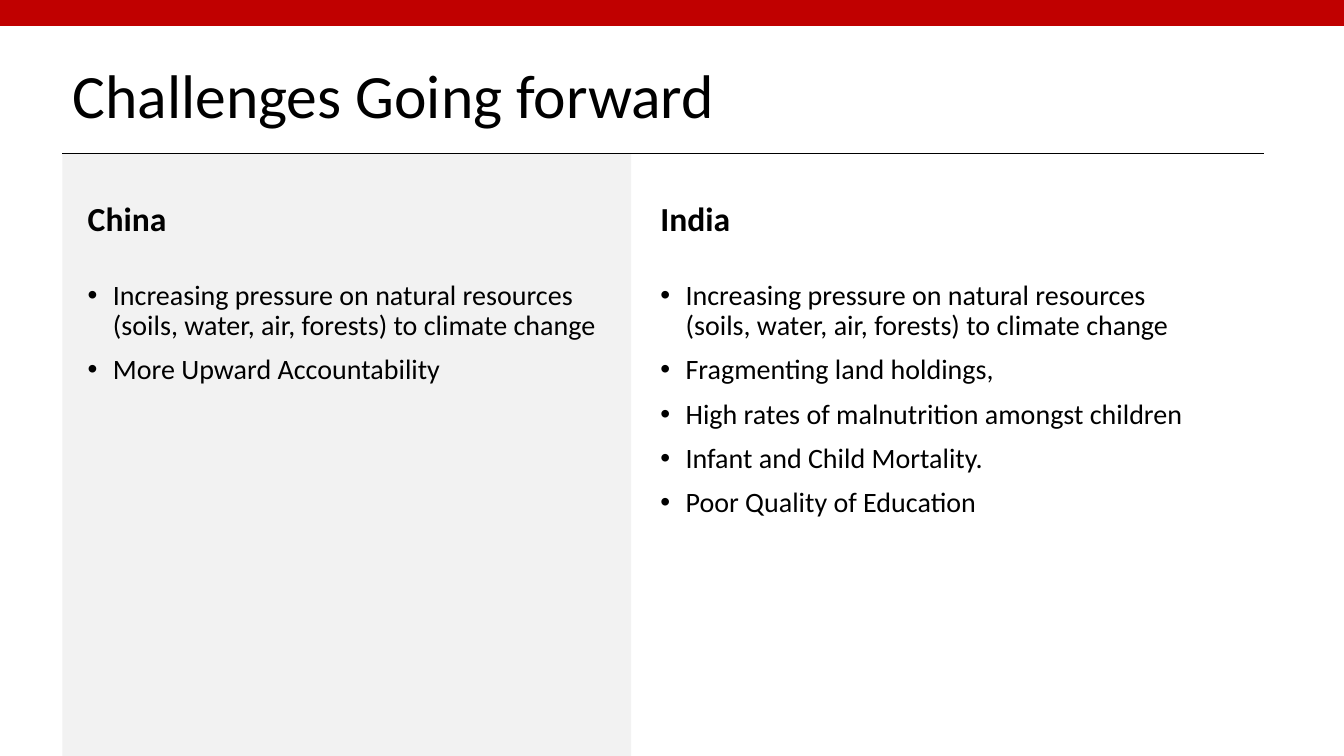
from pptx import Presentation
from pptx.dml.color import RGBColor
from pptx.enum import shapes, text
from pptx.oxml import parse_xml
from pptx.oxml import ns
from pptx.util import Inches, Pt

RED = RGBColor(0xC0, 0x00, 0x00)
GREY = RGBColor(0xF2, 0xF2, 0xF2)
BLACK = RGBColor(0x00, 0x00, 0x00)
WHITE = RGBColor(0xFF, 0xFF, 0xFF)

EDGE, RULE = 0.62, 1.52
SHARED = ("Increasing pressure on natural resources "
          "(soils, water, air, forests) to climate change")
COLUMNS = [
    (0.77, 5.64, "China", [SHARED, "More Upward Accountability"]),
    (6.45, 5.67, "India", [
        SHARED,
        "Fragmenting land holdings,",
        "High rates of malnutrition amongst children",
        "Infant and Child Mortality.",
        "Poor Quality of Education",
    ]),
]


def add_block(slide, box, color):
    block = slide.shapes.add_shape(
        shapes.MSO_SHAPE.RECTANGLE, *map(Inches, box))
    block.shadow.inherit = False
    block.fill.solid()
    block.fill.fore_color.rgb = color
    block.line.fill.background()
    return block


def add_rule(slide, left, right, top):
    rule = slide.shapes.add_connector(
        shapes.MSO_CONNECTOR.STRAIGHT,
        Inches(left), Inches(top), Inches(right), Inches(top))
    rule.line.color.rgb = BLACK
    rule.line.width = Pt(0.5)
    props = rule._element.spPr
    props.append(parse_xml(f"<a:effectLst {ns.nsdecls('a')}/>"))


def fill_text(holder, box, lines, size, anchor, bold=False, before=10):
    holder.left, holder.top, holder.width, holder.height = map(Inches, box)
    frame = holder.text_frame
    frame.text = "\n".join(lines)
    frame.word_wrap = True
    frame.auto_size = text.MSO_AUTO_SIZE.NONE
    frame.vertical_anchor = anchor
    for para in frame.paragraphs:
        para.alignment = text.PP_ALIGN.LEFT
        para.line_spacing = 0.9
        para.space_before = Pt(before)
        font = para.font
        font.name, font.size, font.bold = "Calibri", Pt(size), bold
        font.color.rgb = BLACK


def add_bullets(holder):
    for para in holder.text_frame.paragraphs:
        props = para._p.get_or_add_pPr()
        props.set("marL", str(Inches(0.25)))
        props.set("indent", str(Inches(-0.25)))
        bullet = parse_xml(f'<a:buChar {ns.nsdecls("a")} char="•"/>')
        props.insert_element_before(
            bullet, "a:tabLst", "a:defRPr", "a:extLst")


def add_column(head, body, left, width, name, points):
    fill_text(head, (left, RULE, width, 0.9), [name], 24,
              text.MSO_ANCHOR.BOTTOM, bold=True)
    fill_text(body, (left, 2.74, width, 4.03), points, 20,
              text.MSO_ANCHOR.TOP)
    add_bullets(body)


def main():
    deck = Presentation()
    deck.slide_width, deck.slide_height = Inches(13.33), Inches(7.5)
    slide = deck.slides.add_slide(deck.slide_layouts.get_by_name("Comparison"))
    slide.background.fill.solid()
    slide.background.fill.fore_color.rgb = WHITE

    panel = add_block(slide, (EDGE, RULE, 5.64, 7.5 - RULE), GREY)
    slide.shapes.title._element.addprevious(panel._element)

    fill_text(slide.shapes.title, (EDGE, 0.25, 11.5, 1.45),
              ["Challenges Going forward"], 44,
              text.MSO_ANCHOR.MIDDLE, before=0)
    holders = list(slide.placeholders)[1:]
    for head, body, column in zip(holders[::2], holders[1::2], COLUMNS):
        add_column(head, body, *column)

    band = add_block(slide, (0, 0, 13.33, 0.25), RED)
    band.line.color.rgb = RED
    band.line.width = Pt(1)
    add_rule(slide, EDGE, 12.54, RULE)
    deck.save("out.pptx")


if __name__ == "__main__":
    main()
